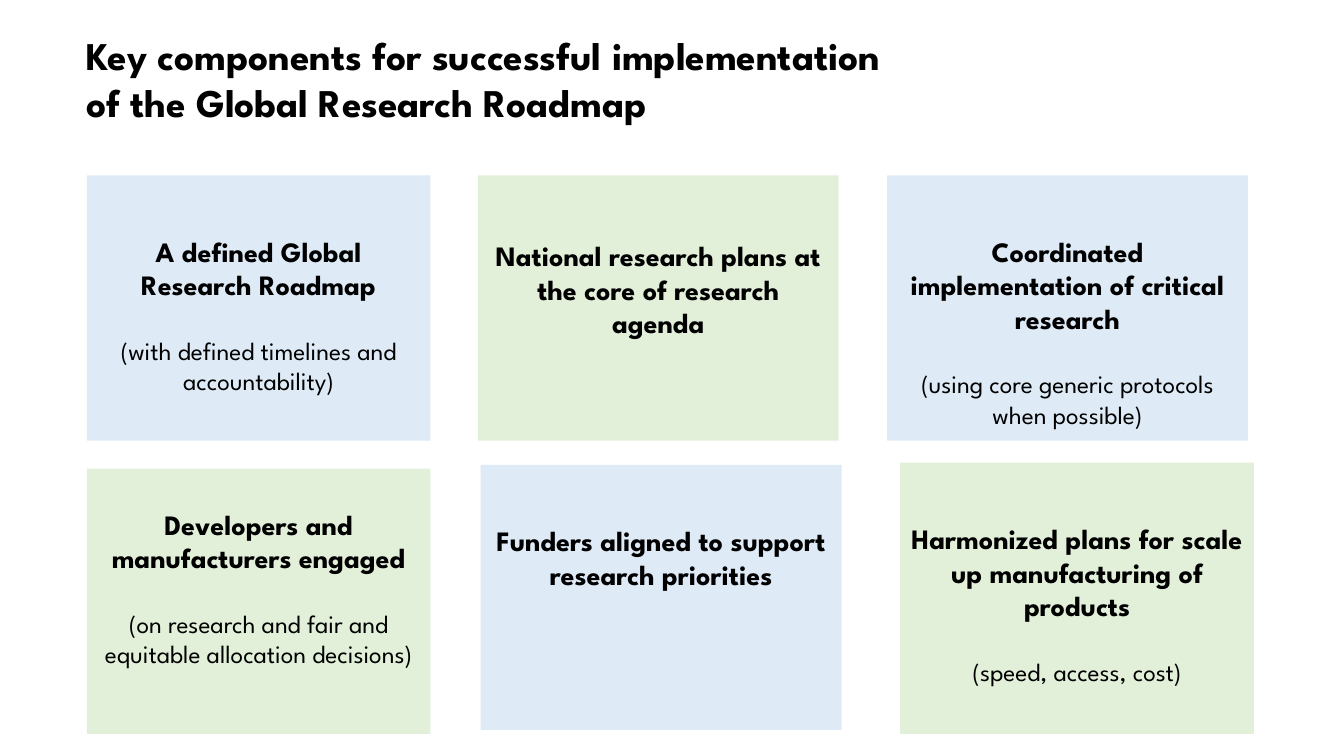
from dataclasses import dataclass

from pptx import Presentation
from pptx import util as u
from pptx.dml.color import RGBColor
from pptx.enum import shapes, text

BLACK = RGBColor(0x00, 0x00, 0x00)
BLUE = RGBColor(0xDE, 0xEB, 0xF7)
GREEN = RGBColor(0xE2, 0xF0, 0xD9)

TITLE = {"name": "League Spartan", "size": u.Pt(28), "bold": True}
HEADING = {**TITLE, "size": u.Pt(20)}
DETAIL = {**TITLE, "size": u.Pt(18), "bold": False}


@dataclass
class Card:
    left: float
    top: float
    width: float
    height: float
    fill: RGBColor
    heading: str
    detail: str = ""
    inset: float = 42  # space above the heading


CARDS = [
    # Top row
    Card(62, 125.3, 245.5, 189.4, BLUE, "A defined Global Research Roadmap",
         "(with defined timelines and accountability)"),
    Card(341.3, 125.3, 257.8, 189.4, GREEN,
         "National research plans at the core of research agenda", inset=45),
    Card(633.6, 125.3, 257.8, 189.4, BLUE,
         "Coordinated implementation of critical research",
         "(using core generic protocols when possible)"),
    # Bottom row
    Card(62, 334.8, 245.5, 189.4, GREEN, "Developers and manufacturers engaged",
         "(on research and fair and equitable allocation decisions)", inset=27.6),
    Card(343.4, 332, 257.8, 189.4, BLUE,
         "Funders aligned to support research priorities"),
    Card(643, 330.5, 252.7, 193.7, GREEN,
         "Harmonized plans for scale up manufacturing of products",
         "(speed, access, cost)"),
]


def write(para, words: str, style: dict) -> None:
    span = para.add_run()
    span.text = words
    for key, value in style.items():
        setattr(span.font, key, value)
    span.font.color.rgb = BLACK


def draw_card(page, card: Card) -> None:
    box = page.shapes.add_shape(
        shapes.MSO_SHAPE.RECTANGLE,
        *(u.Pt(n) for n in (card.left, card.top, card.width, card.height)))
    box.shadow.inherit = False
    box.fill.solid()
    box.fill.fore_color.rgb = card.fill
    box.line.fill.background()
    frame = box.text_frame
    frame.word_wrap = True
    frame.vertical_anchor = text.MSO_ANCHOR.TOP
    frame.margin_top = u.Pt(card.inset)
    para = frame.paragraphs[0]
    para.alignment = text.PP_ALIGN.CENTER
    write(para, card.heading, HEADING)
    if card.detail:
        para = frame.add_paragraph()
        para.alignment = text.PP_ALIGN.CENTER
        para.space_before = u.Pt(24)
        write(para, card.detail, DETAIL)


def draw_title(page, lines: list[str]) -> None:
    box = page.shapes.add_textbox(u.Pt(54.7), u.Pt(18.7), u.Pt(764.6), u.Pt(74.9))
    frame = box.text_frame
    frame.word_wrap = True
    for number, line in enumerate(lines):
        para = frame.add_paragraph() if number else frame.paragraphs[0]
        write(para, line, TITLE)


def main() -> None:
    deck = Presentation()
    deck.slide_width, deck.slide_height = u.Pt(960), u.Pt(540)
    page = deck.slides.add_slide(deck.slide_layouts[6])
    draw_title(page, ["Key components for successful implementation",
                      "of the Global Research Roadmap"])
    for card in CARDS:
        draw_card(page, card)
    deck.save("out.pptx")


if __name__ == "__main__":
    main()
